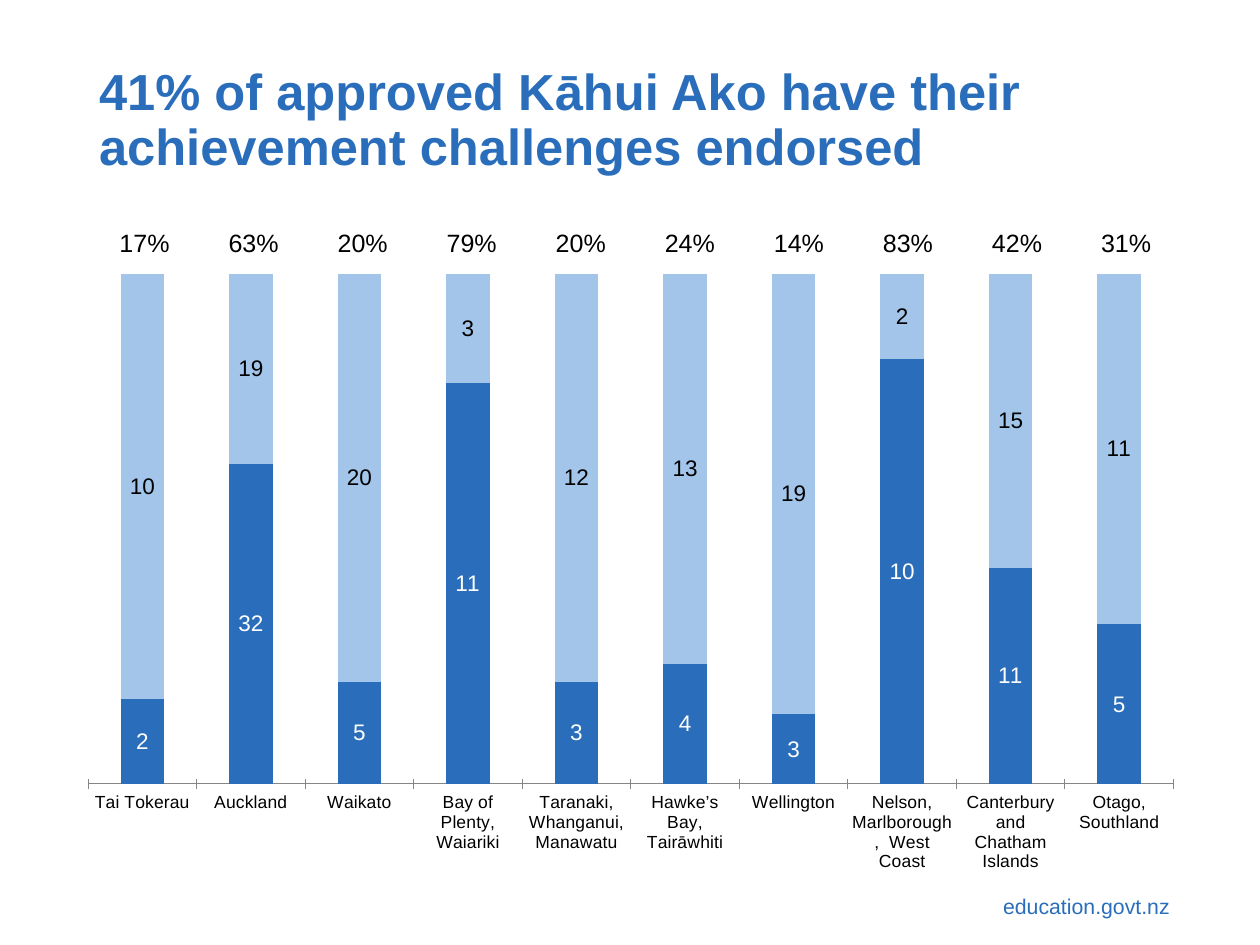
from lxml import etree
from pptx import Presentation
from pptx import util as u
from pptx.chart.data import CategoryChartData
from pptx.dml.color import RGBColor
from pptx.enum import chart as ch, text
from pptx.oxml import ns

FONT = "Arial"
COLORS = {"blue": "2A6EBB", "light": "A3C5EA", "black": "000000",
          "white": "FFFFFF", "axis": "868686"}
REGIONS = ["Tai Tokerau", "Auckland", "Waikato", "Bay of Plenty, Waiariki",
           "Taranaki, Whanganui, Manawatu", "Hawke’s Bay, Tairāwhiti",
           "Wellington", "Nelson, Marlborough,  West Coast",
           "Canterbury and Chatham Islands", "Otago, Southland"]
ENDORSED = [2, 32, 5, 11, 3, 4, 3, 10, 11, 5]
NOT_ENDORSED = [10, 19, 20, 3, 12, 13, 19, 2, 15, 11]


def rgb(name):
    return RGBColor.from_string(COLORS[name])


def style_font(font, size, color, bold=False):
    font.name = FONT
    font.size = u.Pt(size)
    font.bold = bold
    font.color.rgb = rgb(color)


def add_run(p, content, size, color, bold=False):
    r = p.add_run()
    r.text = content
    style_font(r.font, size, color, bold)


def set_margins(tf):
    tf.margin_left = tf.margin_right = u.Inches(0.14)
    tf.margin_top = tf.margin_bottom = u.Inches(0.07)
    tf.word_wrap = True


def add_title(slide, x, y, w, h):
    sp = slide.shapes.title
    sp.left, sp.top, sp.width, sp.height = map(u.Inches, (x, y, w, h))
    tf = sp.text_frame
    set_margins(tf)
    tf.auto_size = text.MSO_AUTO_SIZE.NONE
    tf.vertical_anchor = text.MSO_ANCHOR.MIDDLE
    p = tf.paragraphs[0]
    p.alignment = text.PP_ALIGN.LEFT
    p.line_spacing = 0.9
    add_run(p, "41% of approved Kāhui Ako have their achievement challenges endorsed",
            40.5, "blue", True)


def add_percentages(slide, x, y, w, h):
    table = slide.shapes.add_table(1, len(REGIONS), *map(u.Inches, (x, y, w, h))).table
    table.first_row = table.horz_banding = False
    for cell, done, rest in zip(table.rows[0].cells, ENDORSED, NOT_ENDORSED):
        cell.fill.background()
        cell.margin_left = cell.margin_right = 0
        cell.margin_top = cell.margin_bottom = 0
        cell.vertical_anchor = text.MSO_ANCHOR.MIDDLE
        p = cell.text_frame.paragraphs[0]
        p.alignment = text.PP_ALIGN.CENTER
        add_run(p, f"{done / (done + rest):.0%}", 20, "black")


def set_plot_layout(chart, x, y, w, h):
    area = chart._chartSpace.find(".//" + ns.qn("c:plotArea"))
    for old in area.findall(ns.qn("c:layout")):
        area.remove(old)
    layout = etree.Element(ns.qn("c:layout"))
    manual = etree.SubElement(layout, ns.qn("c:manualLayout"))
    settings = [("layoutTarget", "inner"), ("xMode", "edge"), ("yMode", "edge"),
                ("x", x), ("y", y), ("w", w), ("h", h)]
    for tag, value in settings:
        etree.SubElement(manual, ns.qn(f"c:{tag}")).set("val", str(value))
    area.insert(0, layout)


def add_region_chart(slide, x, y, w, h):
    data = CategoryChartData()
    data.categories = REGIONS
    data.add_series("Series 1", ENDORSED)
    data.add_series("Series 2", NOT_ENDORSED)
    chart = slide.shapes.add_chart(ch.XL_CHART_TYPE.COLUMN_STACKED_100,
                                   *map(u.Inches, (x, y, w, h)), data).chart
    chart.has_title = chart.has_legend = False
    style_font(chart.font, 14, "black")
    set_plot_layout(chart, 0.012, 0.022, 0.975, 0.834)

    chart.value_axis.visible = False
    chart.value_axis.has_major_gridlines = False
    axis = chart.category_axis
    axis.major_tick_mark = ch.XL_TICK_MARK.CROSS
    axis.format.line.color.rgb = rgb("axis")
    axis.format.line.width = u.Pt(0.75)

    plot = chart.plots[0]
    plot.gap_width = 150
    plot.overlap = 100
    plot.vary_by_categories = False
    for series, fill, label in zip(plot.series, ("blue", "light"), ("white", "black")):
        series.format.fill.solid()
        series.format.fill.fore_color.rgb = rgb(fill)
        labels = series.data_labels
        labels.show_value = True
        labels.position = ch.XL_LABEL_POSITION.CENTER
        style_font(labels.font, 18, label)


def add_footer(slide, x, y, w, h):
    tf = slide.shapes.add_textbox(*map(u.Inches, (x, y, w, h))).text_frame
    set_margins(tf)
    p = tf.paragraphs[0]
    p.alignment = text.PP_ALIGN.RIGHT
    add_run(p, "education.govt.nz", 17, "blue")


def main():
    prs = Presentation()
    prs.slide_width, prs.slide_height = u.Inches(14), u.Inches(10.5)
    slide = prs.slides.add_slide(prs.slide_layouts[5])
    add_footer(slide, 9.96, 9.86, 3.18, 0.42)
    add_percentages(slide, 1, 2.52, 12.12, 0.37)
    add_title(slide, 0.96, 0.56, 11.62, 1.58)
    add_region_chart(slide, 0.83, 2.89, 12.37, 6.8)
    prs.save("out.pptx")


if __name__ == "__main__":
    main()
